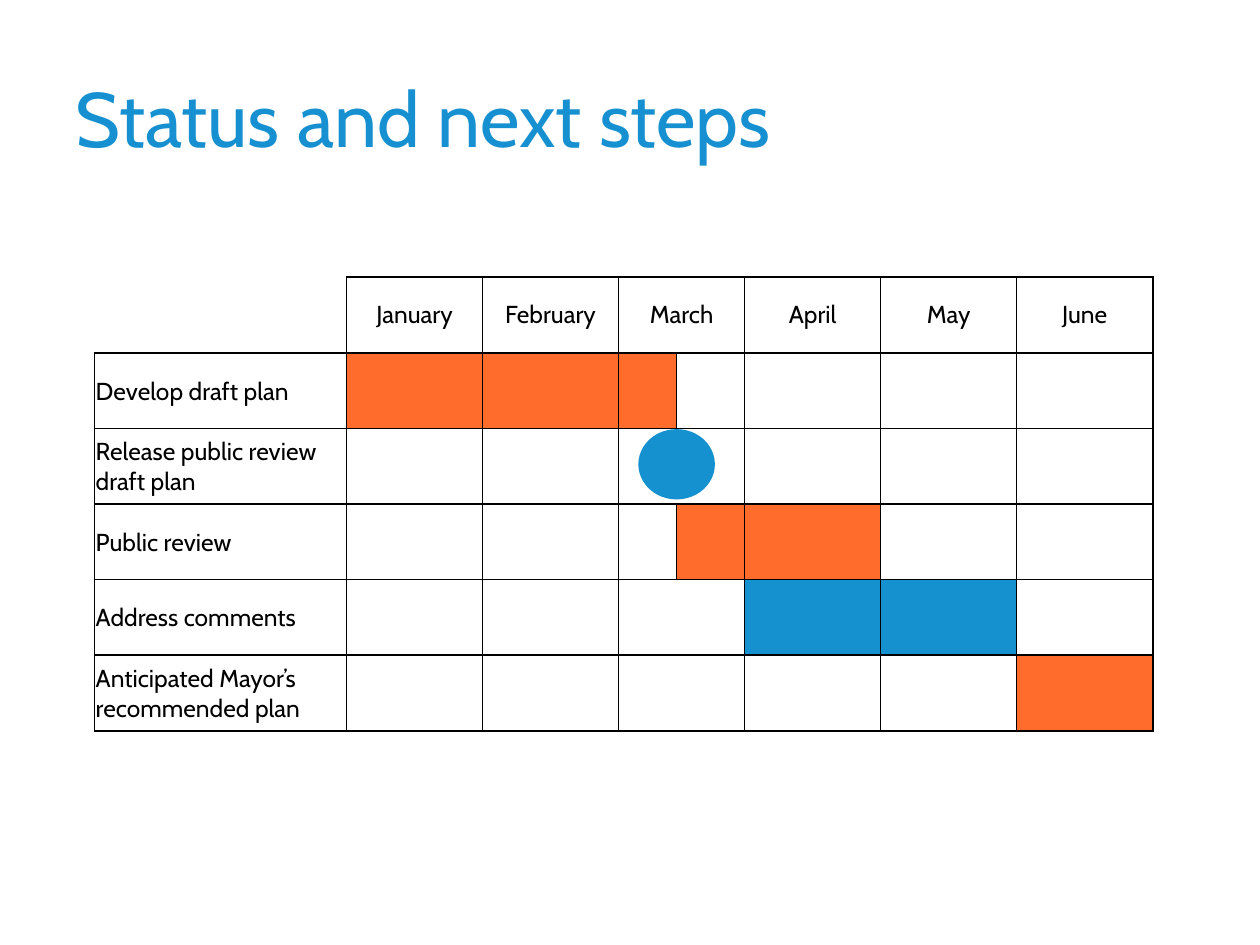
from dataclasses import dataclass
from typing import Optional

from lxml.etree import SubElement
from pptx import Presentation
from pptx.dml.color import RGBColor
from pptx.enum.shapes import MSO_SHAPE
from pptx.enum.text import MSO_ANCHOR, PP_ALIGN
from pptx.oxml.ns import qn
from pptx.util import Inches, Pt


@dataclass(frozen=True)
class Theme:
    font: str = "Cabin"
    title: str = "1690D0"
    blue: str = "1691D0"
    orange: str = "FF6C2C"
    black: str = "000000"
    white: str = "FFFFFF"
    title_size: int = 44
    text_size: int = 14
    border: int = 1
    outline: int = 2


@dataclass(frozen=True)
class Step:
    """A plan step; start and end count months from the start of January."""
    label: str
    start: float = 0
    end: float = 0
    color: Optional[str] = None


THEME = Theme()
MONTHS = ["January", "February", "March", "April", "May", "June"]
STEPS = [
    Step("Develop draft plan", 0, 2.5, THEME.orange),
    Step("Release public review draft plan"),
    Step("Public review", 2.5, 4, THEME.orange),
    Step("Address comments", 3, 5, THEME.blue),
    Step("Anticipated Mayor’s recommended plan", 5, 6, THEME.orange),
]
MILESTONE_ROW, MILESTONE_MONTH = 2, 2.5

# Each month column starts here; March is divided in two.
STARTS = [0, 1, 2, 2.5, 3, 4, 5]
MARCH = 1 + STARTS.index(2)
WIDTHS = [2, 1.08, 1.08, 0.46, 0.54, 1.08, 1.08, 1.08]
LEFT, TOP, ROW_H = 0.75, 2.2, 0.6


def write(tf, text: str, size: int, color: str, align=None) -> None:
    p = tf.paragraphs[0]
    if align is not None:
        p.alignment = align
    r = p.add_run()
    r.text = text
    r.font.name = THEME.font
    r.font.size = Pt(size)
    r.font.color.rgb = RGBColor.from_string(color)


def paint_cell(cell, fill: Optional[str] = None, white_sides: str = "") -> None:
    """Fill a cell and draw its four borders, black unless named white."""
    tc_pr = cell._tc.get_or_add_tcPr()
    for side in "LRTB":
        ln = SubElement(tc_pr, qn(f"a:ln{side}"), w=str(Pt(THEME.border)))
        solid = SubElement(ln, qn("a:solidFill"))
        color = THEME.white if side in white_sides else THEME.black
        SubElement(solid, qn("a:srgbClr"), val=color)
    if fill:
        cell.fill.solid()
        cell.fill.fore_color.rgb = RGBColor.from_string(fill)
    else:
        cell.fill.background()
    cell.vertical_anchor = MSO_ANCHOR.MIDDLE


def add_schedule(slide):
    rows = len(STEPS) + 1
    frame = slide.shapes.add_table(rows, len(WIDTHS), Inches(LEFT), Inches(TOP),
                                   Inches(sum(WIDTHS)), Inches(ROW_H * rows))
    table = frame.table
    table.first_row = table.horz_banding = False
    for column, width in zip(table.columns, WIDTHS):
        column.width = Inches(width)
    for row in table.rows:
        row.height = Inches(ROW_H)

    for i in range(rows):
        if i == 0 or 2.5 not in (STEPS[i - 1].start, STEPS[i - 1].end):
            table.cell(i, MARCH).merge(table.cell(i, MARCH + 1))

    paint_cell(table.cell(0, 0), white_sides="LT")
    for c, start in enumerate(STARTS, 1):
        cell = table.cell(0, c)
        paint_cell(cell)
        if not cell.is_spanned:
            write(cell.text_frame, MONTHS[int(start)], THEME.text_size,
                  THEME.black, PP_ALIGN.CENTER)

    for i, step in enumerate(STEPS, 1):
        label = table.cell(i, 0)
        label.margin_left = label.margin_right = label.margin_top = Inches(0.01)
        label.margin_bottom = 0
        paint_cell(label)
        write(label.text_frame, step.label, THEME.text_size, THEME.black)
        for c, start in enumerate(STARTS, 1):
            active = step.start <= start < step.end
            paint_cell(table.cell(i, c), step.color if active else None)


def add_milestone(slide, row: int, month: float) -> None:
    w, h = 0.58, 0.53
    center = LEFT + sum(WIDTHS[:1 + STARTS.index(month)])
    sp = slide.shapes.add_shape(
        MSO_SHAPE.OVAL, Inches(center - w / 2),
        Inches(TOP + row * ROW_H + 0.02), Inches(w), Inches(h))
    sp.shadow.inherit = False
    sp.fill.solid()
    sp.fill.fore_color.rgb = RGBColor.from_string(THEME.blue)
    sp.line.color.rgb = RGBColor.from_string(THEME.blue)
    sp.line.width = Pt(THEME.outline)


def main() -> None:
    prs = Presentation()
    prs.slide_width, prs.slide_height = Inches(10), Inches(7.5)
    slide = prs.slides.add_slide(prs.slide_layouts[5])
    title = slide.shapes.title
    title.left, title.top = Inches(0.5), Inches(0.3)
    title.width, title.height = Inches(9), Inches(1.25)
    title.text_frame.vertical_anchor = MSO_ANCHOR.MIDDLE
    write(title.text_frame, "Status and next steps", THEME.title_size,
          THEME.title, PP_ALIGN.LEFT)
    add_schedule(slide)
    add_milestone(slide, MILESTONE_ROW, MILESTONE_MONTH)
    prs.save("out.pptx")


if __name__ == "__main__":
    main()
